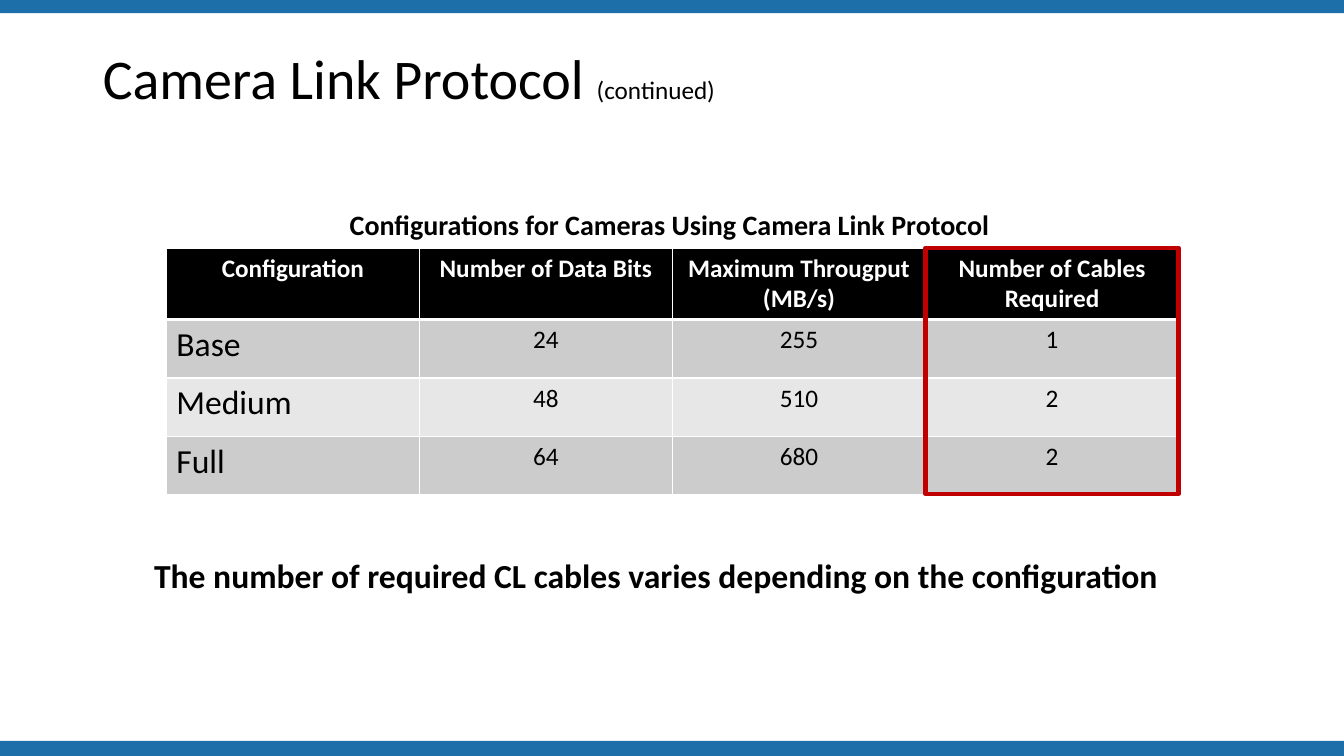
from lxml import etree
from pptx import Presentation
from pptx.dml.color import RGBColor
from pptx.enum import shapes, text
from pptx.oxml import ns
from pptx.util import Inches, Pt

BLUE = RGBColor(0x1D, 0x6F, 0xA9)
RED = RGBColor(0xC0, 0x00, 0x00)
BLACK = RGBColor(0x00, 0x00, 0x00)
WHITE = RGBColor(0xFF, 0xFF, 0xFF)
GRAY = RGBColor(0xCC, 0xCC, 0xCC)
LIGHT_GRAY = RGBColor(0xE7, 0xE7, 0xE7)

LEFT, CENTER = text.PP_ALIGN.LEFT, text.PP_ALIGN.CENTER
TABLE_LEFT, TABLE_TOP = 1.65, 2.46
COL_WIDTH, HEADER_HEIGHT, ROW_HEIGHT = 2.51, 0.7, 0.58

ROWS = [
    ("Configuration", "Number of Data Bits", "Maximum Througput (MB/s)",
     "Number of Cables Required"),
    ("Base", "24", "255", "1"),
    ("Medium", "48", "510", "2"),
    ("Full", "64", "680", "2"),
]


def add_text(p, content, size=18, bold=False, color=BLACK, align=LEFT):
    p.alignment = align
    r = p.add_run()
    r.text = content
    r.font.name = "Calibri"
    r.font.size = Pt(size)
    r.font.bold = bold
    r.font.color.rgb = color


def add_rect(s, left, top, width, height, fill=None, line=None):
    sp = s.shapes.add_shape(shapes.MSO_SHAPE.RECTANGLE, Inches(left), Inches(top),
                            Inches(width), Inches(height))
    sp.shadow.inherit = False
    if fill is None:
        sp.fill.background()
    else:
        sp.fill.solid()
        sp.fill.fore_color.rgb = fill
    if line is None:
        sp.line.fill.background()
    else:
        sp.line.color.rgb = line
        sp.line.width = Pt(3)


def add_label(s, left, top, width, height, content, size):
    tf = s.shapes.add_textbox(Inches(left), Inches(top),
                              Inches(width), Inches(height)).text_frame
    tf.word_wrap = True
    add_text(tf.paragraphs[0], content, size=size, bold=True)


def add_title(s, content, suffix):
    title = s.shapes.title
    title.left, title.top = Inches(0.92), Inches(0.4)
    title.width, title.height = Inches(11.5), Inches(0.82)
    tf = title.text_frame
    tf.vertical_anchor = text.MSO_ANCHOR.MIDDLE
    p = tf.paragraphs[0]
    p.line_spacing = 0.9
    add_text(p, content, size=40)
    add_text(p, suffix, size=18)


def set_borders(cell, top, bottom):
    tc_pr = cell._tc.get_or_add_tcPr()
    for tag, width in (("a:lnL", 1), ("a:lnR", 1), ("a:lnT", top), ("a:lnB", bottom)):
        ln = etree.SubElement(tc_pr, ns.qn(tag), w=str(Pt(width)))
        fill = etree.SubElement(ln, ns.qn("a:solidFill"))
        etree.SubElement(fill, ns.qn("a:srgbClr"), val=str(WHITE))


def add_grid(s, rows):
    height = HEADER_HEIGHT + ROW_HEIGHT * (len(rows) - 1)
    width = COL_WIDTH * len(rows[0])
    table = s.shapes.add_table(len(rows), len(rows[0]), Inches(TABLE_LEFT),
                               Inches(TABLE_TOP), Inches(width), Inches(height)).table
    for column in table.columns:
        column.width = Inches(COL_WIDTH)
    for i, row in enumerate(rows):
        header = i == 0
        table.rows[i].height = Inches(HEADER_HEIGHT if header else ROW_HEIGHT)
        for j, content in enumerate(row):
            cell = table.cell(i, j)
            set_borders(cell, top=3 if i == 1 else 1, bottom=3 if header else 1)
            cell.fill.solid()
            cell.fill.fore_color.rgb = BLACK if header else (LIGHT_GRAY, GRAY)[i % 2]
            row_name = j == 0 and not header
            add_text(cell.text_frame.paragraphs[0], content,
                     size=24 if row_name else 18, bold=header,
                     color=WHITE if header else BLACK,
                     align=LEFT if row_name else CENTER)
    add_rect(s, TABLE_LEFT + width - COL_WIDTH, TABLE_TOP, COL_WIDTH, height, line=RED)


def main():
    prs = Presentation()
    prs.slide_width, prs.slide_height = Inches(13.33), Inches(7.5)
    s = prs.slides.add_slide(prs.slide_layouts[5])
    for top in (7.35, -0.02):
        add_rect(s, 0, top, 13.33, 0.15, fill=BLUE)
    add_title(s, "Camera Link Protocol ", "(continued)")
    add_grid(s, ROWS)
    add_label(s, 3.37, 2.01, 6.6, 0.44,
              "Configurations for Cameras Using Camera Link Protocol", 20)
    add_label(s, 1.43, 5.46, 10.26, 0.5,
              "The number of required CL cables varies depending on the configuration", 24)
    prs.save("out.pptx")


if __name__ == "__main__":
    main()
